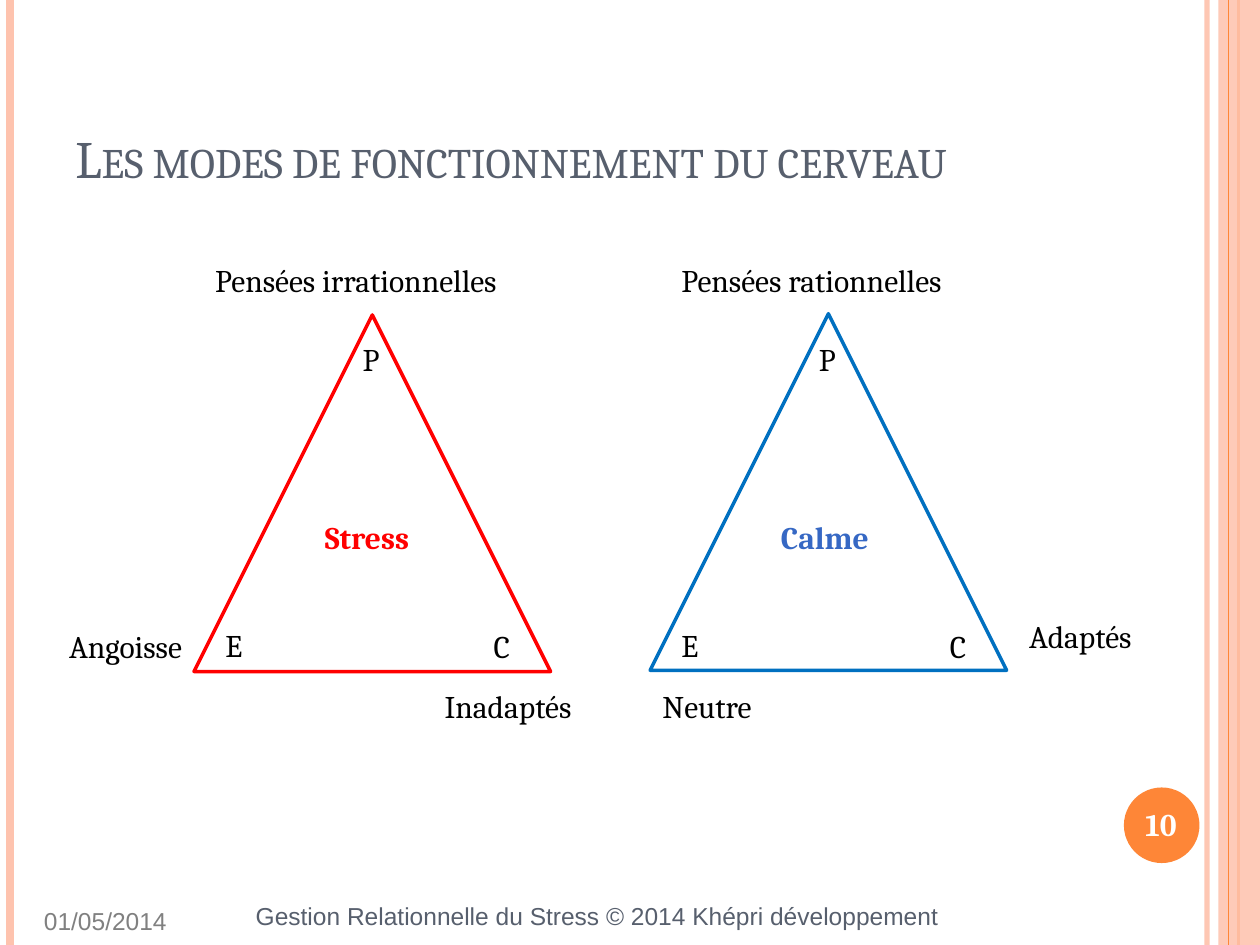
from lxml import etree
from pptx import Presentation
from pptx import util as u
from pptx.dml.color import RGBColor
from pptx.enum import shapes, text
from pptx.oxml.ns import qn

COLORS = dict(peach="FEC3AE", orange="FE8637", slate="575F6D", gray="808080", white="FFFFFF",
              black="000000", red="FF0000", blue="0070C0", calm="3668C4")
COLS, ROWS = 100, 75

prs = Presentation()
prs.slide_width, prs.slide_height = u.Inches(10), u.Inches(7.5)
CELL = prs.slide_width / COLS
s = prs.slides.add_slide(prs.slide_layouts[6])


def grid(*cells):
    return [u.Emu(round(c * CELL)) for c in cells]


def add_text(words, box, color="black", align="LEFT", anchor="TOP", wrap=True, **fmt):
    """Add a one-line text box; fmt holds font attributes to override."""
    tf = s.shapes.add_textbox(*grid(*box)).text_frame
    tf.word_wrap = wrap
    tf.vertical_anchor = getattr(text.MSO_ANCHOR, anchor)
    p = tf.paragraphs[0]
    p.alignment = getattr(text.PP_ALIGN, align)
    r = p.add_run()
    r.text = words
    for name, value in {"name": "Cambria", "size": u.Pt(18), **fmt}.items():
        setattr(r.font, name, value)
    r.font.color.rgb = RGBColor.from_string(COLORS[color])
    return r


# Side bands: column, colour, line width, opacity; the wide band lies under the last line
for col, color, width, alpha in [(95.8, "peach", 3, 93), (0.8, "peach", 4.5, 100),
                                 (98.3, "orange", 1.5, 100), (97.5, "orange", 0.75, 100)]:
    if col == 97.5:
        band = s.shapes.add_shape(shapes.MSO_SHAPE.RECTANGLE, *grid(96.7, 0, 3.3, ROWS))
        band.shadow.inherit = False
        band.fill.solid()
        band.fill.fore_color.rgb = RGBColor.from_string(COLORS["peach"])
        band.line.fill.background()
        fill = band._element.spPr.find(".//" + qn("a:srgbClr"))
        etree.SubElement(fill, qn("a:alpha"), val="87000")
    line = s.shapes.add_connector(shapes.MSO_CONNECTOR.STRAIGHT, *grid(col, 0, col, ROWS))
    line.line.width = u.Pt(width)
    line.line.color.rgb = RGBColor.from_string(COLORS[color])
    spPr = line._element.spPr
    if alpha < 100:
        etree.SubElement(spPr.find(".//" + qn("a:srgbClr")), qn("a:alpha"), val=str(alpha * 1000))
    etree.SubElement(spPr, qn("a:effectLst"))

# Page number, footer and title
badge = s.shapes.add_shape(shapes.MSO_SHAPE.OVAL, *grid(89.2, 62.5, 6, 6))
badge.shadow.inherit = False
badge.fill.solid()
badge.fill.fore_color.rgb = RGBColor.from_string(COLORS["orange"])
badge.line.fill.background()
add_text("10", (88.6, 63.4, 7.1, 4), "white", "CENTER", bold=True)

small = {"name": "Arial", "size": u.Pt(14)}
add_text("01/05/2014", (2.5, 71.4, 15.2, 3.6), "gray", **small)
add_text("Gestion Relationnelle du Stress © 2014 Khépri développement", (17.7, 71, 57.8, 4),
         "slate", "RIGHT", **small)
title = add_text("Les modes de fonctionnement du cerveau", (5, 3, 81.7, 12.5), "slate",
                 anchor="BOTTOM", size=u.Pt(30))
title._r.get_or_add_rPr().set("cap", "small")

# Triangles: left, top, outline, then the mode's name, its colour and box
SIDE = 28.3
for left, top, outline, mode, color, box in [
        (15.4, 25, "red", "Stress", "red", (24.8, 40.6, 9.7, 4)),
        (51.6, 24.9, "blue", "Calme", "calm", (61, 40.6, 9.6, 4))]:
    sp = s.shapes.add_shape(shapes.MSO_SHAPE.ISOSCELES_TRIANGLE, *grid(left, top, SIDE, SIDE))
    sp.shadow.inherit = False
    sp.fill.background()
    sp.line.color.rgb = RGBColor.from_string(COLORS[outline])
    sp.line.width = u.Pt(2)
    for letter, dx, row in [("P", 12.4, 26.5), ("E", 1.5, 49.2), ("C", 22.8, 49.3)]:
        add_text(letter, (left + dx, row, 4.7, 4))
    add_text(mode, box, color, wrap=False, bold=True)

# Labels around the triangles: column, row, width
for words, col, row, width in [
        ("Pensées irrationnelles", 16.1, 20.2, 26.8), ("Pensées rationnelles", 53.1, 20.2, 25.4),
        ("Angoisse", 4.5, 49.3, 12.4), ("Inadaptés", 34.3, 54, 13.1),
        ("Neutre", 51.6, 54, 9.6), ("Adaptés", 80.7, 48.5, 11.3)]:
    add_text(words, (col, row, width, 4), wrap=False)

prs.save("out.pptx")
